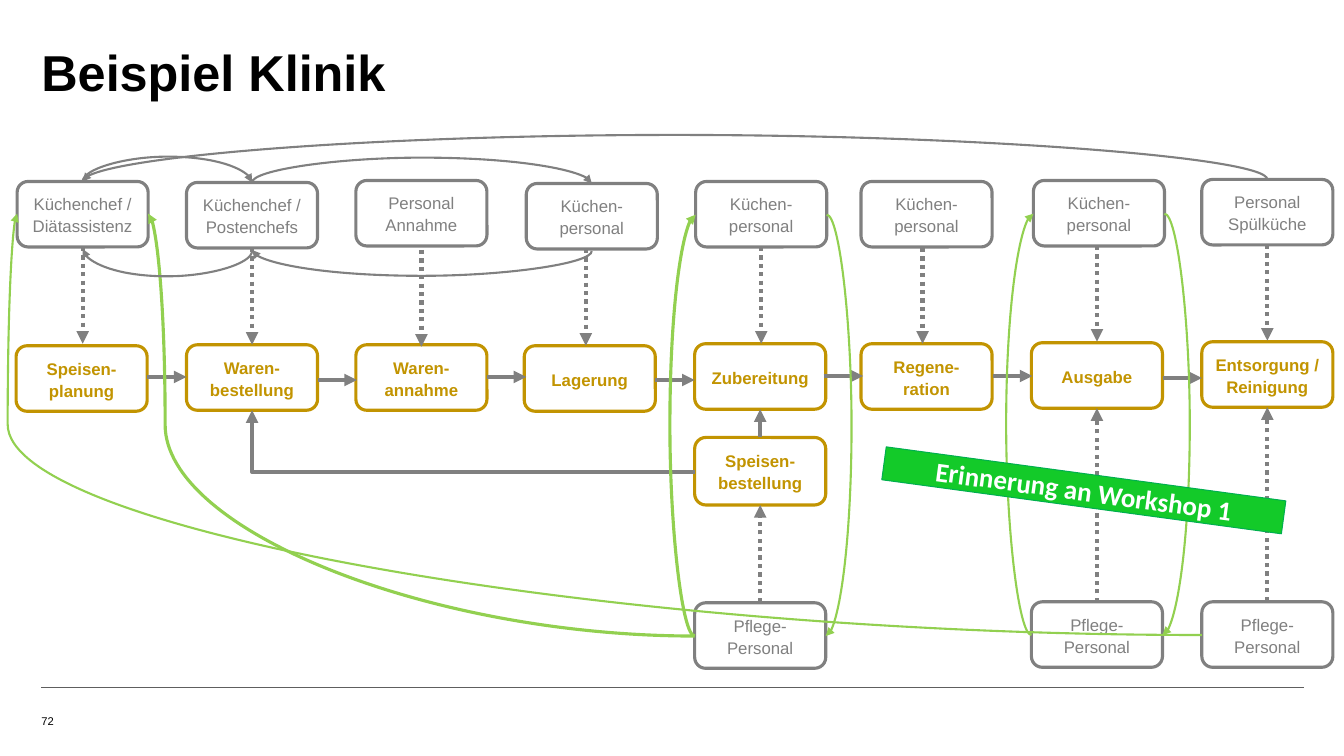
import lxml.etree
import pptx
import pptx.dml.color
import pptx.enum.dml
import pptx.enum.shapes
import pptx.enum.text
import pptx.oxml.ns
import pptx.util

Inches = pptx.util.Inches
Pt = pptx.util.Pt
MSO_SHAPE = pptx.enum.shapes.MSO_SHAPE
MSO_CONNECTOR = pptx.enum.shapes.MSO_CONNECTOR
MSO_ANCHOR = pptx.enum.text.MSO_ANCHOR
PP_ALIGN = pptx.enum.text.PP_ALIGN
qn = pptx.oxml.ns.qn

GOLD, GRAY, GREEN, WHITE, BLACK = "C29401", "808080", "92D050", "FFFFFF", "000000"
BOX_WIDTH, BOX_HEIGHT = 1.3, 0.65


def rgb(value):
    return pptx.dml.color.RGBColor.from_string(value)


def add_line(kind, begin, end, color, width, arrow=True):
    """Add a shadowless connector, by default with an arrowhead at its end."""
    connector = slide.shapes.add_connector(kind, *[Inches(value) for value in (*begin, *end)])
    connector.line.color.rgb = rgb(color)
    connector.line.width = Pt(width)
    if arrow:
        line = connector.line._get_or_add_ln()
        lxml.etree.SubElement(line, qn("a:tailEnd"), type="triangle")
    lxml.etree.SubElement(connector._element.spPr, qn("a:effectLst"))
    return connector


presentation = pptx.Presentation()
presentation.slide_width = Inches(13.33)
presentation.slide_height = Inches(7.5)
slide = presentation.slides.add_slide(presentation.slide_layouts[6])

# Footer rule, page number and title
add_line(MSO_CONNECTOR.STRAIGHT, (0.41, 6.82), (12.93, 6.82), "5E5E5E", 0.5, arrow=False)
for text, top, width, height, size, bold, anchor in [
    ("72", 6.9, 1.57, 0.32, 8, False, MSO_ANCHOR.BOTTOM),
    ("Beispiel Klinik", 0.41, 9.65, 1.27, 36, True, MSO_ANCHOR.TOP),
]:
    box = slide.shapes.add_textbox(Inches(0.41), Inches(top), Inches(width), Inches(height))
    frame = box.text_frame
    frame.word_wrap = True
    frame.vertical_anchor = anchor
    frame.margin_left = frame.margin_top = frame.margin_right = frame.margin_bottom = 0
    paragraph = frame.paragraphs[0]
    paragraph.text = text
    paragraph.font.name = "Arial"
    paragraph.font.size = Pt(size)
    paragraph.font.bold = bold
    paragraph.font.color.rgb = rgb(BLACK)

# Process steps (gold) and the people responsible for them (gray)
steps = [
    ("Speisen-planung", 0.16, 3.43), ("Waren-bestellung", 1.85, 3.42),
    ("Waren-annahme", 3.53, 3.42), ("Lagerung", 5.2, 3.43),
    ("Zubereitung", 6.89, 3.41), ("Regene-ration", 8.54, 3.41),
    ("Ausgabe", 10.23, 3.4), ("Entsorgung / Reinigung", 11.92, 3.39),
    ("Speisen-bestellung", 6.89, 4.34),
]
people = [
    ("Küchenchef /\vDiätassistenz", 0.17, 1.8), ("Küchenchef / Postenchefs", 1.85, 1.81),
    ("Personal Annahme", 3.53, 1.79), ("Küchen-personal", 5.22, 1.82),
    ("Küchen-personal", 6.9, 1.8), ("Küchen-personal", 8.54, 1.8),
    ("Küchen-personal", 10.25, 1.79), ("Personal Spülküche", 11.92, 1.78),
    ("Pflege-Personal", 6.89, 5.98), ("Pflege-Personal", 10.23, 5.97),
    ("Pflege-Personal", 11.92, 5.97),
]
for boxes, color, bold in [(steps, GOLD, True), (people, GRAY, False)]:
    for text, left, top in boxes:
        height = 0.67 if text == "Speisen-bestellung" else BOX_HEIGHT
        shape = slide.shapes.add_shape(MSO_SHAPE.ROUNDED_RECTANGLE, Inches(left), Inches(top),
                                       Inches(BOX_WIDTH), Inches(height))
        shape.shadow.inherit = False
        shape.fill.solid()
        shape.fill.fore_color.rgb = rgb(WHITE)
        shape.line.color.rgb = rgb(color)
        shape.line.width = Pt(2.25)
        shape.text_frame.word_wrap = True
        shape.text_frame.vertical_anchor = MSO_ANCHOR.MIDDLE
        paragraph = shape.text_frame.paragraphs[0]
        paragraph.text = text
        paragraph.alignment = PP_ALIGN.CENTER
        paragraph.line_spacing = 1.1
        paragraph.font.name = "Arial"
        paragraph.font.size = Pt(12)
        paragraph.font.bold = bold
        paragraph.font.color.rgb = rgb(color)

# Process flow from step to step
for left, y in [(1.46, 3.74), (3.15, 3.77), (4.83, 3.74), (6.5, 3.77),
                (8.17, 3.73), (9.85, 3.73), (11.53, 3.75)]:
    add_line(MSO_CONNECTOR.STRAIGHT, (left, y), (left + 0.39, y), GRAY, 3)
add_line(MSO_CONNECTOR.STRAIGHT, (7.54, 4.34), (7.54, 4.06), GRAY, 3)
order_line = add_line(MSO_CONNECTOR.ELBOW, (6.89, 4.68), (2.5, 4.07), GRAY, 3)
order_line._element.spPr.find(qn("a:prstGeom")).set("prst", "bentConnector2")

# Dotted arrows from people to steps
for x, begin_y, end_y in [
    (0.82, 2.45, 3.41), (2.5, 2.46, 3.42), (4.18, 2.48, 3.44), (5.81, 2.47, 3.43),
    (7.55, 2.45, 3.41), (9.15, 2.46, 3.41), (10.88, 2.44, 3.39), (12.57, 2.43, 3.38),
    (7.54, 5.97, 5.01), (10.88, 5.97, 4.05), (12.57, 5.96, 4.04),
]:
    dotted = add_line(MSO_CONNECTOR.STRAIGHT, (x, begin_y), (x, end_y), GRAY, 3)
    dotted.line.dash_style = pptx.enum.dml.MSO_LINE.ROUND_DOT

# Curved feedback: begin, end, outermost x (green) or y (gray), rotation, colour, width
for begin, end, bulge, rotation, color, width in [
    ((6.89, 6.31), (6.9, 2.13), 6.64, 0, GREEN, 2.25),
    ((8.2, 2.13), (8.19, 6.31), 8.45, 0, GREEN, 1.5),
    ((6.89, 6.31), (1.47, 2.12), 1.64, 0, GREEN, 2.25),
    ((0.82, 1.8), (2.5, 1.81), 1.55, 270, GRAY, 1.5),
    ((2.5, 2.49), (0.82, 2.47), 2.74, 90, GRAY, 1.5),
    ((12.57, 1.78), (0.82, 1.8), 1.34, 270, GRAY, 1.5),
    ((11.92, 6.3), (0.17, 2.12), 0.08, 0, GREEN, 1.5),
    ((10.23, 6.3), (10.25, 2.12), 9.98, 0, GREEN, 1.5),
    ((11.55, 2.12), (11.53, 6.3), 11.8, 0, GREEN, 1.5),
    ((5.87, 2.49), (2.5, 2.48), 2.74, 90, GRAY, 1.5),
    ((2.5, 1.81), (5.87, 1.82), 1.56, 270, GRAY, 1.5),
]:
    axis = 1 if rotation else 0
    adjustment = (bulge - begin[axis]) / (end[axis] - begin[axis])
    center_x, center_y = (begin[0] + end[0]) / 2, (begin[1] + end[1]) / 2
    half_x, half_y = (end[0] - begin[0]) / 2, (end[1] - begin[1]) / 2
    # Turn the span back, so that the rotation brings the ends into place
    if rotation == 90:
        half_x, half_y = half_y, -half_x
    elif rotation == 270:
        half_x, half_y = -half_y, half_x
    curve = add_line(MSO_CONNECTOR.CURVE, (center_x - half_x, center_y - half_y),
                     (center_x + half_x, center_y + half_y), color, width)
    properties = curve._element.spPr
    if rotation:
        properties.find(qn("a:xfrm")).set("rot", str(rotation * 60000))
    guides = properties.find(qn("a:prstGeom")).get_or_add_avLst()
    lxml.etree.SubElement(guides, qn("a:gd"), name="adj1", fmla=f"val {round(adjustment * 100000)}")

# Tilted reminder banner
banner = slide.shapes.add_shape(MSO_SHAPE.RECTANGLE, Inches(8.75), Inches(4.7), Inches(4), Inches(0.33))
banner.rotation = 7.7
banner.shadow.inherit = False
banner.fill.solid()
banner.fill.fore_color.rgb = rgb("13CA29")
banner.line.color.rgb = rgb("00AF50")
banner.line.width = Pt(0.72)
frame = banner.text_frame
frame.margin_left = frame.margin_top = frame.margin_right = frame.margin_bottom = 0
frame.vertical_anchor = MSO_ANCHOR.MIDDLE
paragraph = frame.paragraphs[0]
paragraph.text = "Erinnerung an Workshop 1"
paragraph.alignment = PP_ALIGN.CENTER
paragraph.font.name = "Calibri"
paragraph.font.size = Pt(19.3)
paragraph.font.bold = True
paragraph.font.color.rgb = rgb(WHITE)

presentation.save("out.pptx")
